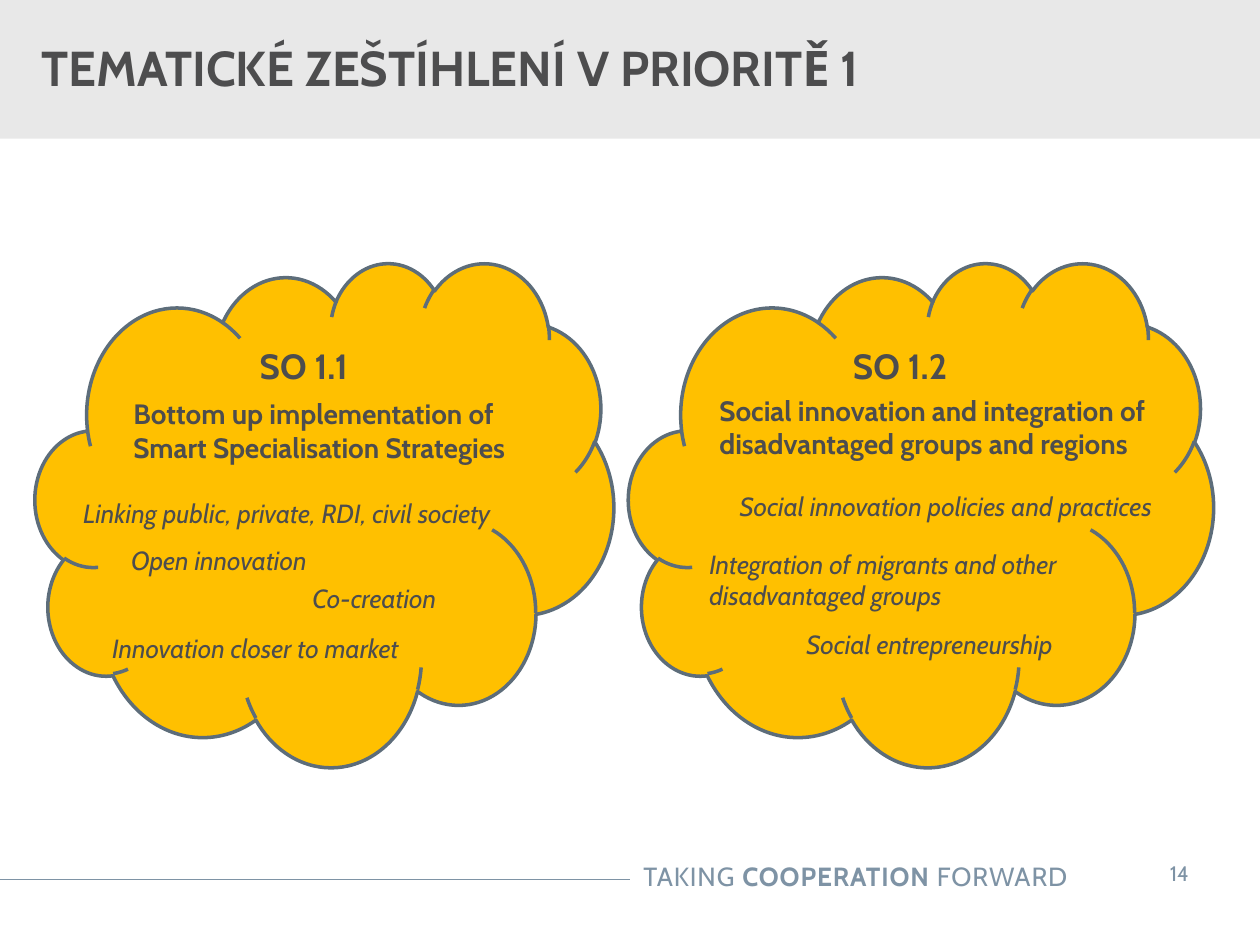
from lxml import etree
from pptx import Presentation
from pptx.dml.color import RGBColor
from pptx.enum.shapes import MSO_CONNECTOR, MSO_SHAPE
from pptx.enum.text import MSO_ANCHOR, MSO_AUTO_SIZE, PP_ALIGN
from pptx.oxml.ns import qn
from pptx.util import Inches, Pt

FONT = "Cabin"
COLORS = {"text": "4D4D4E", "band": "E8E8E8", "footer": "7E93A5",
          "cloud": "FFC000", "outline": "5D6D7A"}

TITLE = "TEMATICKÉ ZEŠTÍHLENÍ V PRIORITĚ 1"
FOOTER = [("TAKING ", False), ("COOPERATION", True), (" FORWARD", False)]
PAGE_NUMBER = "14"

# Each box is left, top, width, height in inches
OBJECTIVES = [
    {"name": "SO 1.1", "box": (0.28, 2.08, 4.59, 4),
     "heading": ("Bottom up implementation of Smart Specialisation Strategies",
                 (0.98, 3.11, 3.53, 0.62)),
     "topics": [
         ("Linking public, private, RDI, civil society", (0.58, 3.91, 4.06, 0.34)),
         ("Open innovation", (0.96, 4.28, 2.08, 0.34)),
         ("Co-creation", (2.4, 4.58, 1.59, 0.34)),
         ("Innovation closer to market", (0.81, 4.98, 3.19, 0.34))]},
    {"name": "SO 1.2", "box": (4.99, 2.08, 4.64, 4),
     "heading": ("Social innovation and integration of disadvantaged groups and regions",
                 (5.63, 3.08, 3.97, 0.62)),
     "topics": [
         ("Social innovation policies and practices", (5.79, 3.85, 3.89, 0.34)),
         ("Integration of migrants and other disadvantaged groups",
          (5.55, 4.31, 3.53, 0.59)),
         ("Social entrepreneurship", (6.32, 4.95, 3.53, 0.34))]},
]


def rgb(name):
    return RGBColor.from_string(COLORS[name])


def inches(box):
    return [Inches(length) for length in box]


def style(font, size, color="text", bold=None, italic=None):
    font.name, font.size = FONT, Pt(size)
    font.bold, font.italic = bold, italic
    font.color.rgb = rgb(color)


def add_filled(slide, preset, box, fill):
    shape = slide.shapes.add_shape(preset, *inches(box))
    shape.shadow.inherit = False
    shape.fill.solid()
    shape.fill.fore_color.rgb = rgb(fill)
    return shape


def add_text(slide, text, box, insets=(0.08, 0.04), wrap=True):
    frame = slide.shapes.add_textbox(*inches(box)).text_frame
    frame.word_wrap = wrap
    frame.auto_size = MSO_AUTO_SIZE.SHAPE_TO_FIT_TEXT
    frame.margin_left = frame.margin_right = Inches(insets[0])
    frame.margin_top = frame.margin_bottom = Inches(insets[1])
    paragraph = frame.paragraphs[0]
    paragraph.text = text
    return paragraph


def add_frame(slide):
    # Title band
    band = add_filled(slide, MSO_SHAPE.RECTANGLE, (0, 0, 10, 1.1), "band")
    band.line.fill.background()

    # Footer rule
    rule = slide.shapes.add_connector(
        MSO_CONNECTOR.STRAIGHT, *inches((-0.01, 6.98, 5, 6.98)))
    rule.line.color.rgb = rgb("footer")
    rule.line.width = Pt(0.75)
    etree.SubElement(rule._element.spPr, qn("a:effectLst"))

    # Footer slogan
    slogan = add_text(slide, "", (3.88, 6.78, 4.69, 0.35), (0.1, 0.05))
    slogan.alignment = PP_ALIGN.RIGHT
    for words, bold in FOOTER:
        run = slogan.add_run()
        run.text = words
        style(run.font, 15, "footer", bold)
        run._r.get_or_add_rPr().set("spc", "50")

    # Page number
    number = add_text(slide, PAGE_NUMBER, (8.99, 6.73, 0.74, 0.4), (0.2, 0.1), False)
    number.alignment = PP_ALIGN.CENTER
    style(number.font, 12, "footer")


def add_title(slide):
    title = slide.shapes.title
    title.left, title.top, title.width, title.height = inches((-0.01, 0.16, 7.21, 0.75))
    slide.shapes._spTree.append(title._element)  # in front of the band
    frame = title.text_frame
    frame.text = TITLE
    frame.word_wrap = True
    frame.auto_size = MSO_AUTO_SIZE.NONE
    frame.vertical_anchor = MSO_ANCHOR.MIDDLE
    heading = frame.paragraphs[0]
    heading.alignment = PP_ALIGN.LEFT
    properties = heading._p.get_or_add_pPr()
    properties.set("marL", str(Inches(0.24)))
    properties.set("indent", "0")
    style(heading.font, 28, bold=True)


def add_objective(slide, objective):
    cloud = add_filled(slide, MSO_SHAPE.CLOUD, objective["box"], "cloud")
    cloud.line.color.rgb = rgb("outline")
    cloud.line.width = Pt(2)
    cloud.text_frame.vertical_anchor = MSO_ANCHOR.TOP
    name = cloud.text_frame.paragraphs[0]
    name.text = objective["name"]
    name.alignment = PP_ALIGN.CENTER
    style(name.font, 20, bold=True)

    style(add_text(slide, *objective["heading"]).font, 16, bold=True)
    for topic, box in objective["topics"]:
        style(add_text(slide, topic, box).font, 15, italic=True)


def main():
    deck = Presentation()
    deck.slide_width, deck.slide_height = Inches(10), Inches(7.5)
    slide = deck.slides.add_slide(deck.slide_layouts[5])
    add_frame(slide)
    add_title(slide)
    for objective in OBJECTIVES:
        add_objective(slide, objective)
    deck.save("out.pptx")


if __name__ == "__main__":
    main()
